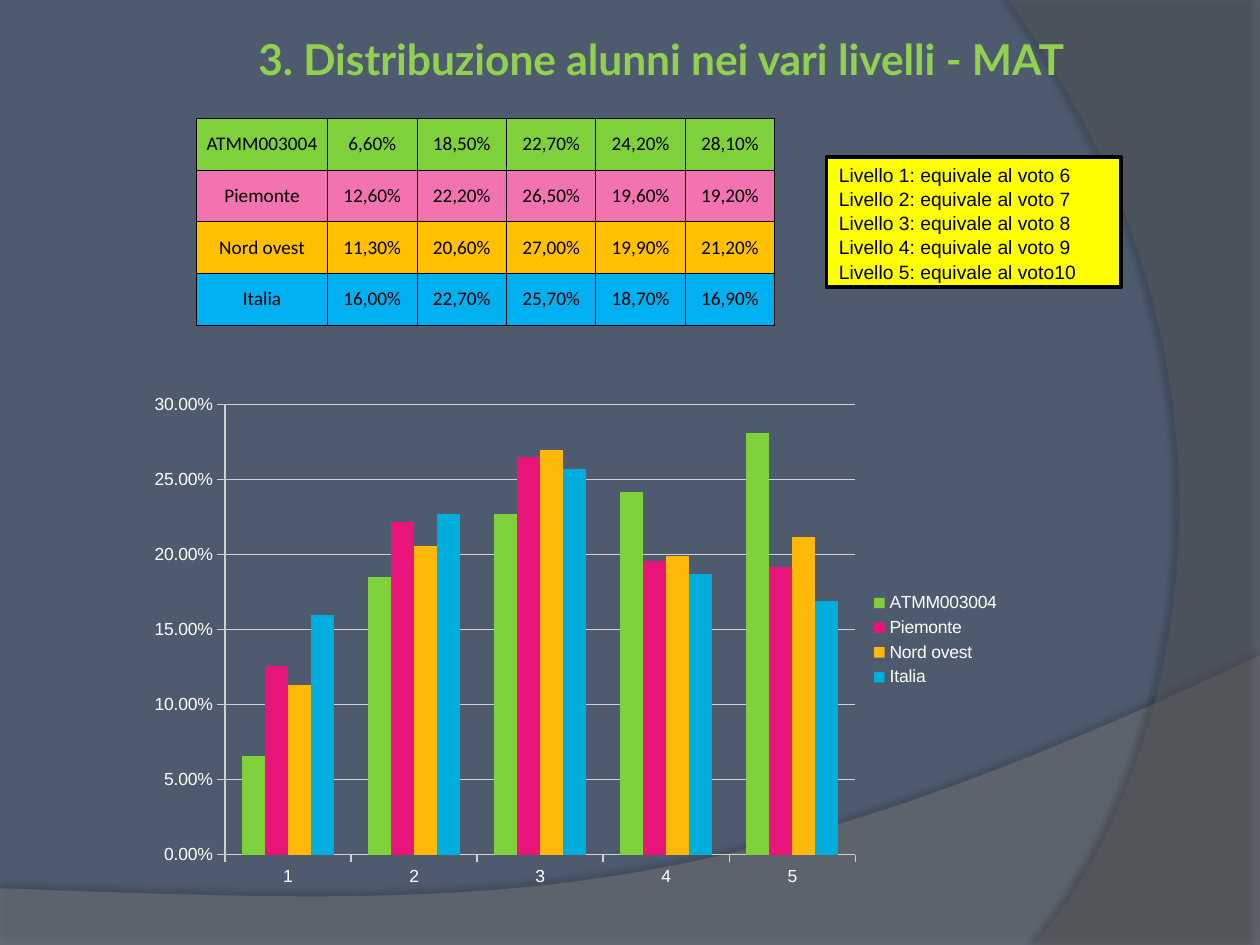
from lxml.etree import SubElement
from pptx import Presentation
from pptx.chart.data import CategoryChartData
from pptx.dml.color import RGBColor
from pptx.enum.chart import XL_CHART_TYPE, XL_LEGEND_POSITION, XL_TICK_MARK
from pptx.enum.shapes import MSO_SHAPE
from pptx.enum.text import MSO_ANCHOR, PP_ALIGN
from pptx.oxml import parse_xml
from pptx.oxml.ns import nsdecls, qn
from pptx.util import Inches, Pt

LEVELS = ["1", "2", "3", "4", "5"]
AREAS = [
    ("ATMM003004", [0.066, 0.185, 0.227, 0.242, 0.281], "7FD13B", "7FD13B"),
    ("Piemonte", [0.126, 0.222, 0.265, 0.196, 0.192], "F273AF", "EA157A"),
    ("Nord ovest", [0.113, 0.206, 0.27, 0.199, 0.212], "FFC000", "FEB80A"),
    ("Italia", [0.16, 0.227, 0.257, 0.187, 0.169], "00B0F0", "00ADDC"),
]
GRADES = [
    "Livello 1: equivale al voto 6",
    "Livello 2: equivale al voto 7",
    "Livello 3: equivale al voto 8",
    "Livello 4: equivale al voto 9",
    "Livello 5: equivale al voto10",
]


def color(code):
    return RGBColor.from_string(code)


def percent(value):
    return f"{value:.2%}".replace(".", ",")


def curve(start, first, second, end, steps=60):
    points = []
    for step in range(steps + 1):
        t = step / steps
        weights = ((1 - t) ** 3, 3 * t * (1 - t) ** 2, 3 * t * t * (1 - t), t ** 3)
        points.append(tuple(
            sum(w * p[axis] for w, p in zip(weights, (start, first, second, end)))
            for axis in (0, 1)
        ))
    return points


def write(frame, text, size=11, font="Arial", ink="000000", bold=False,
          align=PP_ALIGN.LEFT, spacing=1.0):
    frame.text = text
    for paragraph in frame.paragraphs:
        paragraph.alignment = align
        paragraph.line_spacing = spacing
        for run in paragraph.runs:
            run.font.size = Pt(size)
            run.font.name = font
            run.font.bold = bold
            run.font.color.rgb = color(ink)


class LevelSlide:
    text_ink = "FFFFFF"
    rule_ink = "D0D0D0"
    border_ink = "000000"

    def __init__(self, presentation):
        self.slide = presentation.slides.add_slide(presentation.slide_layouts[5])
        self.shapes = self.slide.shapes
        self.slide.background.fill.solid()
        self.slide.background.fill.fore_color.rgb = color("4E5B6F")

    def wave(self, points, fill, opacity, shade, distance, direction):
        builder = self.shapes.build_freeform(
            Inches(points[0][0]), Inches(points[0][1]))
        builder.add_line_segments(
            [(Inches(x), Inches(y)) for x, y in points[1:]], close=True)
        band = builder.convert_to_shape()
        band.line.fill.background()
        band.fill.solid()
        band.fill.fore_color.rgb = color(fill)
        tint = band.fill._xPr.find(qn("a:solidFill"))[0]
        SubElement(tint, qn("a:alpha"), val=str(opacity * 1000))
        band._element.spPr.append(parse_xml(
            f'<a:effectLst {nsdecls("a")}><a:outerShdw blurRad="{Pt(4)}" '
            f'dist="{Pt(distance)}" dir="{direction * 60000}" algn="ctr" '
            f'rotWithShape="0"><a:srgbClr val="000000">'
            f'<a:alpha val="{shade * 1000}"/></a:srgbClr></a:outerShdw></a:effectLst>'))

    def title(self, text, left, top, width, height):
        heading = self.shapes.title
        heading.left, heading.top = Inches(left), Inches(top)
        heading.width, heading.height = Inches(width), Inches(height)
        frame = heading.text_frame
        frame.word_wrap = True
        frame.vertical_anchor = MSO_ANCHOR.MIDDLE
        frame.margin_left = frame.margin_right = Inches(0.05)
        write(frame, text, size=24.3, font="Lato", ink="92D050", bold=True,
              align=PP_ALIGN.CENTER)
        self.shapes._spTree.append(heading._element)

    def note(self, lines, left, top, width, height):
        key = self.shapes.add_shape(MSO_SHAPE.RECTANGLE, Inches(left), Inches(top),
                                    Inches(width), Inches(height))
        key.shadow.inherit = False
        key.fill.solid()
        key.fill.fore_color.rgb = color("FFFF00")
        key.line.color.rgb = color(self.border_ink)
        key.line.width = Pt(2.25)
        key.text_frame.word_wrap = True
        key.text_frame.vertical_anchor = MSO_ANCHOR.MIDDLE
        write(key.text_frame, "\n".join(lines), spacing=1.05)

    def chart(self, left, top, width, height):
        data = CategoryChartData(number_format="0.00%")
        data.categories = LEVELS
        for name, shares, _, _ in AREAS:
            data.add_series(name, shares)
        chart = self.shapes.add_chart(
            XL_CHART_TYPE.COLUMN_CLUSTERED, Inches(left), Inches(top),
            Inches(width), Inches(height), data).chart
        chart.has_title = False
        chart.font.size = Pt(10)
        chart.font.name = "Arial"
        chart.font.color.rgb = color(self.text_ink)
        chart.has_legend = True
        chart.legend.position = XL_LEGEND_POSITION.RIGHT
        chart.legend.include_in_layout = False
        bars = chart.plots[0]
        bars.gap_width = 150
        bars.overlap = 0
        bars.vary_by_categories = False
        for series, (_, _, _, fill) in zip(bars.series, AREAS):
            series.format.fill.solid()
            series.format.fill.fore_color.rgb = color(fill)
        shares_axis = chart.value_axis
        shares_axis.minimum_scale, shares_axis.maximum_scale = 0, 0.3
        shares_axis.major_unit = 0.05
        shares_axis.has_major_gridlines = True
        shares_axis.tick_labels.number_format = "0.00%"
        shares_axis.tick_labels.number_format_is_linked = False
        for axis in (shares_axis, chart.category_axis):
            axis.major_tick_mark = XL_TICK_MARK.OUTSIDE
            axis.minor_tick_mark = XL_TICK_MARK.NONE
            axis.format.line.color.rgb = color(self.rule_ink)
        shares_axis.major_gridlines.format.line.color.rgb = color(self.rule_ink)
        plot_area = chart._chartSpace.find(".//" + qn("c:plotArea"))
        for layout in plot_area.findall(qn("c:layout")):
            plot_area.remove(layout)
        layout = parse_xml(f'<c:layout {nsdecls("c")}/>')
        manual = SubElement(layout, qn("c:manualLayout"))
        for tag, val in (("layoutTarget", "inner"), ("xMode", "edge"),
                         ("yMode", "edge"), ("x", "0.1"), ("y", "0.04"),
                         ("w", "0.72"), ("h", "0.88")):
            SubElement(manual, qn("c:" + tag), val=val)
        plot_area.insert(0, layout)

    def border(self, cell):
        properties = cell._tc.get_or_add_tcPr()
        for side in ("lnL", "lnR", "lnT", "lnB"):
            edge = SubElement(properties, qn("a:" + side), w=str(Pt(0.5)))
            paint = SubElement(edge, qn("a:solidFill"))
            SubElement(paint, qn("a:srgbClr"), val=self.border_ink)

    def table(self, left, top, name_width, share_width, row_height):
        columns = len(LEVELS) + 1
        grid = self.shapes.add_table(
            len(AREAS), columns, Inches(left), Inches(top),
            Inches(name_width + share_width * len(LEVELS)),
            Inches(row_height * len(AREAS))).table
        grid.first_row = grid.horz_banding = False
        for index, column in enumerate(grid.columns):
            column.width = Inches(share_width if index else name_width)
        for row, (name, shares, fill, _) in zip(grid.rows, AREAS):
            row.height = Inches(row_height)
            for cell, text in zip(row.cells, [name, *map(percent, shares)]):
                self.border(cell)
                cell.fill.solid()
                cell.fill.fore_color.rgb = color(fill)
                cell.vertical_anchor = MSO_ANCHOR.MIDDLE
                cell.margin_left = cell.margin_right = 0
                cell.margin_top = cell.margin_bottom = 0
                write(cell.text_frame, text, font="Calibri", align=PP_ALIGN.CENTER)


def main():
    presentation = Presentation()
    presentation.slide_width, presentation.slide_height = Inches(10), Inches(7.5)
    page = LevelSlide(presentation)
    page.wave([(0, 7.05), (0, 7.5), (10, 7.5)]
              + curve((10, 5.2), (5.59, 7.29), (3.91, 7.19), (0, 7.05)),
              "7F7F7F", 45, 35, 3.5, 270)
    page.wave([(10, 0), (10, 7.5)]
              + curve((8.21, 7.5), (9.35, 6.19), (10.18, 3), (8, 0)),
              "5E5E5E", 40, 45, 4, 180)
    page.title("3. Distribuzione alunni nei vari livelli - MAT", 0.5, 0.07, 9.5, 0.79)
    page.note(GRADES, 6.56, 1.25, 2.34, 1.03)
    page.chart(1.09, 3.05, 6.95, 4.06)
    page.table(1.56, 0.94, 1.04, 0.71, 0.41)
    presentation.save("out.pptx")


if __name__ == "__main__":
    main()
